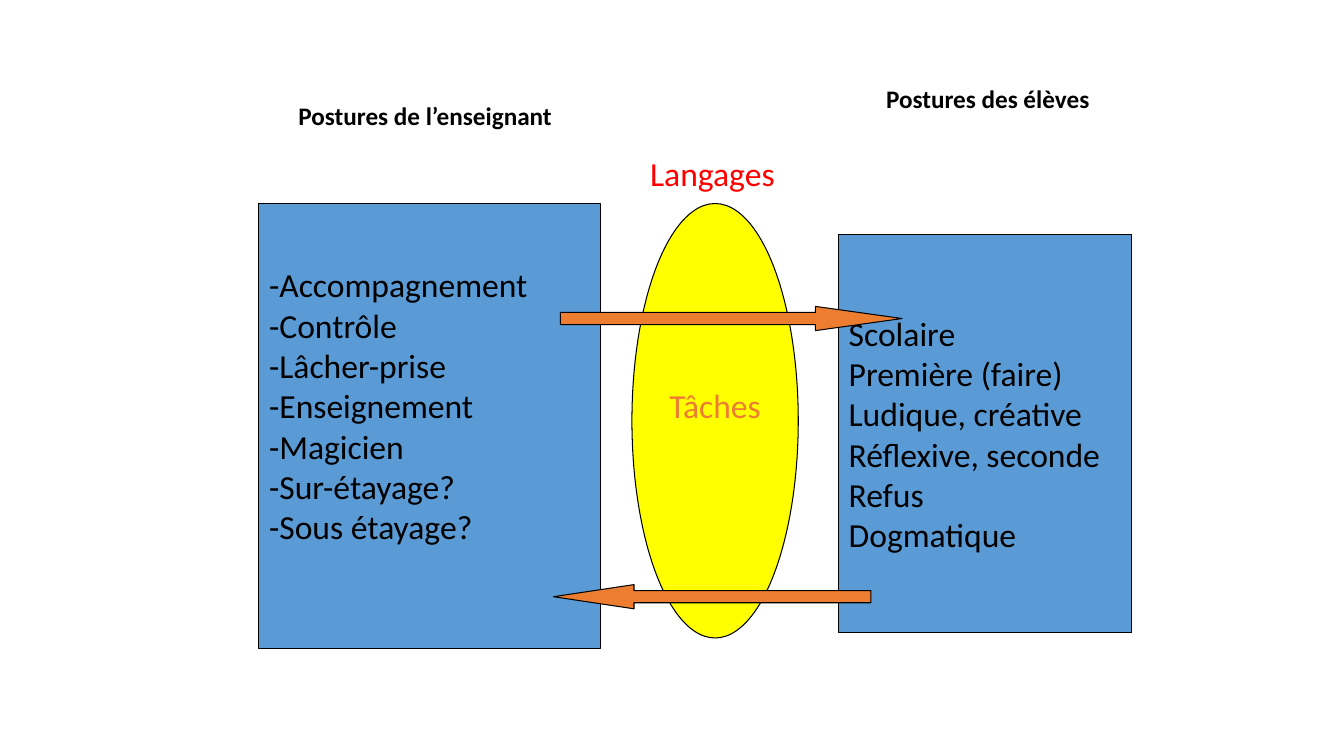
import pptx
import pptx.dml.color
import pptx.enum.shapes
import pptx.enum.text
import pptx.oxml
import pptx.util
import lxml.etree

Pt = pptx.util.Pt
Shapes = pptx.enum.shapes.MSO_SHAPE
Align = pptx.enum.text.PP_ALIGN
Anchor = pptx.enum.text.MSO_ANCHOR
BLACK, BLUE, ORANGE, YELLOW, RED = "000000", "5B9BD5", "ED7D31", "FFFF00", "FF0000"


def paint(shape, fill):
    shape.fill.solid()
    shape.fill.fore_color.rgb = pptx.dml.color.RGBColor.from_string(fill)
    shape.line.color.rgb = pptx.dml.color.RGBColor.from_string(BLACK)
    shape.line.width = Pt(0.75)


def write(shape, lines, size, color, bold=False, align=Align.LEFT, wrap=True, bottom=3.6):
    frame = shape.text_frame
    frame.auto_size = pptx.enum.text.MSO_AUTO_SIZE.NONE
    frame.word_wrap = wrap
    frame.vertical_anchor = Anchor.MIDDLE
    frame.margin_left = frame.margin_right = Pt(7.2)
    frame.margin_top, frame.margin_bottom = Pt(3.6), Pt(bottom)
    for number, line in enumerate(lines):
        para = frame.add_paragraph() if number else frame.paragraphs[0]
        para.alignment = align
        para.space_before = Pt(0)
        if shape.is_placeholder:
            properties = para._p.get_or_add_pPr()
            properties.set("marL", "0")
            properties.set("indent", "0")
            lxml.etree.SubElement(properties, pptx.oxml.ns.qn("a:buNone"))
        span = para.add_run()
        span.text = line
        span.font.name = "Calibri"
        span.font.size = Pt(size)
        span.font.bold = bold
        span.font.color.rgb = pptx.dml.color.RGBColor.from_string(color)


deck = pptx.Presentation()
deck.slide_width, deck.slide_height = Pt(960), Pt(540)
page = deck.slides.add_slide(deck.slide_layouts.get_by_name("Comparison"))
holders = {holder.placeholder_format.idx: holder for holder in page.placeholders}
for index in (10, 11, 12):
    if index in holders:
        holders[index].element.getparent().remove(holders[index].element)

teacher_postures = ["-Accompagnement", "-Contrôle", "-Lâcher-prise", "-Enseignement",
                    "-Magicien", "-Sur-étayage?", "-Sous étayage?"]
pupil_postures = ["Scolaire", "Première (faire)", "Ludique, créative",
                  "Réflexive, seconde", "Refus", "Dogmatique"]

headings = [
    (0, "Langages", (457.2, 105.8, 104.4, 36), 24, RED, False),
    (1, "Postures de l’enseignant", (205.9, 67.7, 196.6, 28.8), 18, BLACK, True),
    (3, "Postures des élèves", (625.7, 56.2, 160.6, 28.8), 18, BLACK, True),
]
for index, text, place, size, color, bold in headings:
    heading = holders[index]
    heading.left, heading.top, heading.width, heading.height = map(Pt, place)
    write(heading, [text], size, color, bold, wrap=False)

lists = [
    (2, teacher_postures, (185, 145.4, 244.1, 317.5), 32.9),
    (4, pupil_postures, (599, 167.8, 209.5, 283.7), 3.6),
]
for index, postures, place, bottom in lists:
    box = holders[index]
    box.left, box.top, box.width, box.height = map(Pt, place)
    paint(box, BLUE)
    write(box, postures, 24, BLACK, bottom=bottom)

tasks = page.shapes.add_shape(Shapes.OVAL, Pt(451.4), Pt(145.4), Pt(118.8), Pt(310.3))
tasks.shadow.inherit = False
paint(tasks, YELLOW)
write(tasks, ["Tâches"], 24, ORANGE, align=Align.CENTER, wrap=False, bottom=25.6)

arrows = [
    (Shapes.RIGHT_ARROW, 400.3, 218.9, 244.1, 3.585),
    (Shapes.LEFT_ARROW, 395.3, 417.6, 226.8, 3.335),
]
for kind, left, top, width, head in arrows:
    arrow = page.shapes.add_shape(kind, Pt(left), Pt(top), Pt(width), Pt(17.3))
    arrow.shadow.inherit = False
    arrow.adjustments[0], arrow.adjustments[1] = 0.5, round(head, 2)
    paint(arrow, ORANGE)

deck.save("out.pptx")
